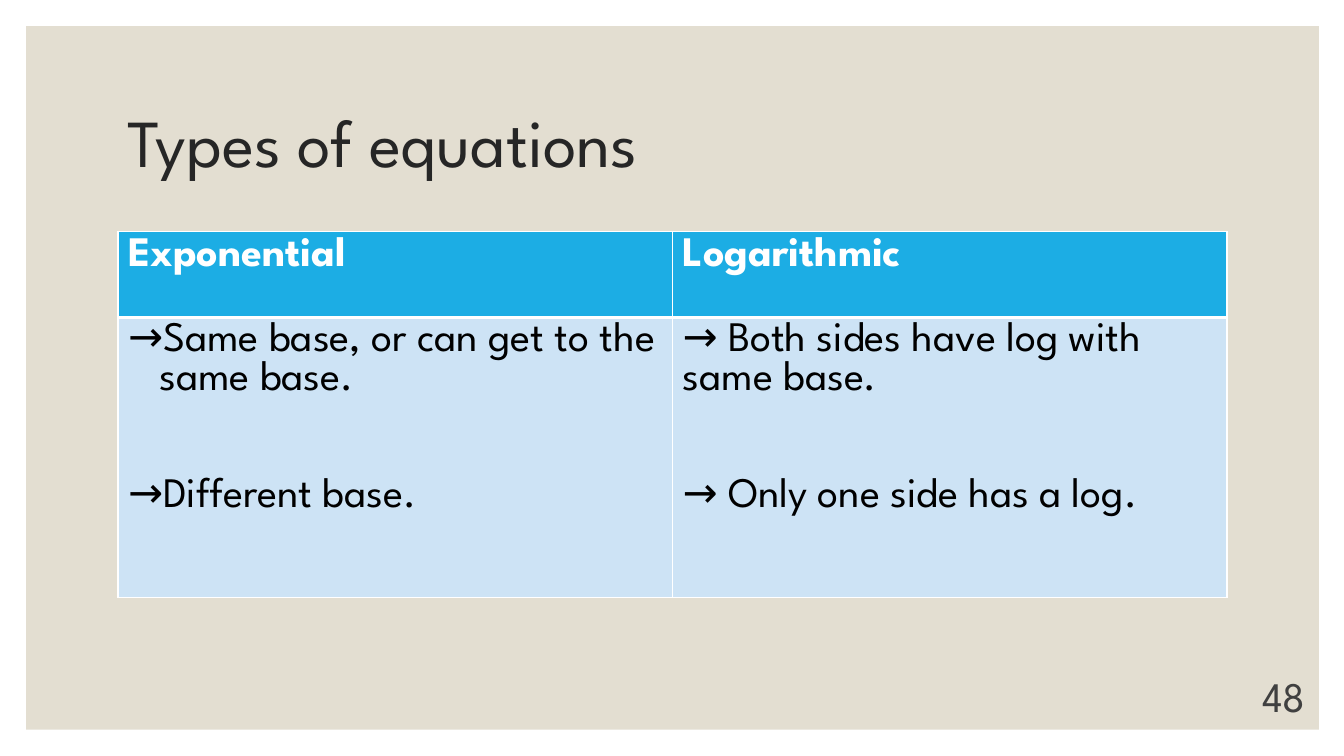
from lxml import etree
from pptx import Presentation
from pptx.dml.color import RGBColor
from pptx.enum.shapes import MSO_SHAPE
from pptx.enum.text import MSO_ANCHOR, PP_ALIGN
from pptx.oxml.ns import qn
from pptx.util import Pt

PX = 9144
FONT = "League Spartan"
RECT = MSO_SHAPE.RECTANGLE
MIDDLE, BOTTOM = MSO_ANCHOR.MIDDLE, MSO_ANCHOR.BOTTOM
LEFT, RIGHT = PP_ALIGN.LEFT, PP_ALIGN.RIGHT
WHITE = RGBColor(0xFF, 0xFF, 0xFF)
BLACK = RGBColor(0, 0, 0)
SAND = RGBColor(0xE3, 0xDE, 0xD1)
TITLE = RGBColor(0x26, 0x26, 0x26)
GREY = RGBColor(0x40, 0x40, 0x40)
BLUE = RGBColor(0x1C, 0xAD, 0xE4)
PALE = RGBColor(0xCD, 0xE3, 0xF5)


def add_run(p, text, size, color, bold=False):
    r = p.add_run()
    r.text = text
    r.font.name = FONT
    r.font.size = Pt(size)
    r.font.bold = bold
    r.font.color.rgb = color


def add_border(tcPr, side, width):
    ln = etree.SubElement(tcPr, qn("a:" + side), w=str(Pt(width)))
    fill = etree.SubElement(ln, qn("a:solidFill"))
    etree.SubElement(fill, qn("a:srgbClr"), val=str(WHITE))


prs = Presentation()
prs.slide_width, prs.slide_height = 1333 * PX, 750 * PX
s = prs.slides.add_slide(prs.slide_layouts[6])

panel = s.shapes.add_shape(RECT, 26 * PX, 26 * PX, 1282 * PX, 698 * PX)
panel.shadow.inherit = False
panel.fill.solid()
panel.fill.fore_color.rgb = SAND
panel.line.fill.background()

labels = [
    ("Types of equations", 117, 70, 1100, 150, 48, TITLE, MIDDLE, LEFT, 0.9),
    ("48", 1145, 690, 160, 30, 30, GREY, BOTTOM, RIGHT, 1.0),
]
for text, x, y, w, h, size, color, anchor, align, spacing in labels:
    tf = s.shapes.add_textbox(x * PX, y * PX, w * PX, h * PX).text_frame
    tf.word_wrap = True
    tf.vertical_anchor = anchor
    p = tf.paragraphs[0]
    p.alignment = align
    p.line_spacing = spacing
    add_run(p, text, size, color)

rows = [
    [["Exponential"], ["Logarithmic"]],
    [
        ["Same base, or can get to the same base.", "Different base."],
        ["→ Both sides have log with same base.", "→ Only one side has a log."],
    ],
]
heights = [85, 278]
table = s.shapes.add_table(2, 2, 117 * PX, 230 * PX, 1100 * PX, sum(heights) * PX).table
for i, row in enumerate(rows):
    header = i == 0
    table.rows[i].height = heights[i] * PX
    for j, lines in enumerate(row):
        cell = table.cell(i, j)
        tcPr = cell._tc.get_or_add_tcPr()
        for side in ("lnL", "lnR", "lnT", "lnB"):
            seam = side == ("lnB" if header else "lnT")
            add_border(tcPr, side, 3 if seam else 1)
        cell.fill.solid()
        cell.fill.fore_color.rgb = BLUE if header else PALE
        for n, line in enumerate(lines):
            tf = cell.text_frame
            p = tf.add_paragraph() if n else tf.paragraphs[0]
            if n:
                p.space_before = Pt(56)
            if not header and j == 0:
                pPr = p._p.get_or_add_pPr()
                pPr.set("marL", str(31 * PX))
                pPr.set("indent", str(-31 * PX))
                etree.SubElement(pPr, qn("a:buFont"), typeface=FONT)
                etree.SubElement(pPr, qn("a:buChar"), char="→")
            add_run(p, line, 30, WHITE if header else BLACK, header)

prs.save("out.pptx")
